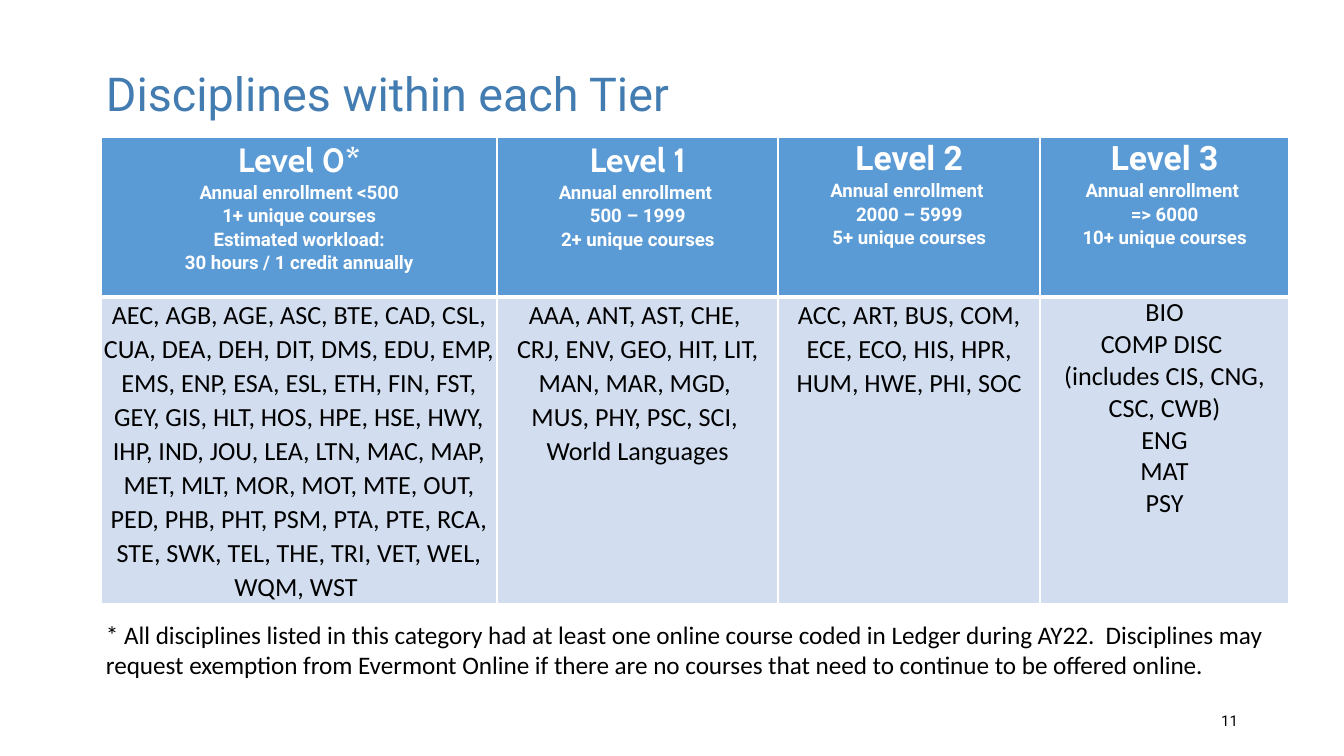
from copy import deepcopy

from lxml.etree import SubElement
from pptx import Presentation
from pptx.dml.color import RGBColor
from pptx.enum.text import MSO_ANCHOR as ANCHOR, PP_ALIGN as ALIGN
from pptx.oxml.ns import qn
from pptx.util import Inches, Pt

W = 10
H = W * 9 / 16
BLUE, PALE, WHITE, BLACK, TITLE = "5B9BD5", "D2DEEF", "FFFFFF", "000000", "427CB1"
COL_WIDTHS = [2.95, 2.09, 1.95, 1.85]
ROW_HEIGHTS = [1.19, 2.28]

# Level name, its font, header lines, disciplines, line spacing of the disciplines
TIERS = [
    ("Level 0*", "Cabin",
     ["Annual enrollment <500\n1+ unique courses", "Estimated workload:",
      "30 hours / 1 credit annually"],
     ["AEC, AGB, AGE, ASC, BTE, CAD, CSL, CUA, DEA, DEH, DIT, DMS, EDU, EMP, "
      "EMS, ENP, ESA, ESL, ETH, FIN, FST, GEY, GIS, HLT, HOS, HPE, HSE, HWY, "
      "IHP, IND, JOU, LEA, LTN, MAC, MAP, MET, MLT, MOR, MOT, MTE, OUT, "
      "PED, PHB, PHT, PSM, PTA, PTE, RCA, STE, SWK, TEL, THE, TRI, VET, WEL, "
      "WQM, WST "], 1.07),
    ("Level 1", "Cabin",
     ["Annual enrollment \n500 – 1999", "2+ unique courses"],
     ["AAA, ANT, AST, CHE, \nCRJ, ENV, GEO, HIT, LIT, MAN, MAR, MGD, \n"
      "MUS, PHY, PSC, SCI, \nWorld Languages"], 1.07),
    ("Level 2", "Roboto",
     ["Annual enrollment \n2000 – 5999", "5+ unique courses"],
     ["ACC, ART, BUS, COM, ECE, ECO, HIS, HPR, HUM, HWE, PHI, SOC"], 1.07),
    ("Level 3", "Roboto",
     ["Annual enrollment \n=> 6000", "10+ unique courses"],
     ["BIO", "COMP DISC \n(includes CIS, CNG, CSC, CWB)", "ENG", "MAT", "PSY"], 1.0),
]
FOOTNOTE = ("* All disciplines listed in this category had at least one online course "
            "coded in Ledger during AY22.  Disciplines may request exemption from "
            "Evermont Online if there are no courses that need to continue to be "
            "offered online.")


def rgb(hex_color):
    return RGBColor.from_string(hex_color)


def write(tf, text, size, font="Roboto", color=BLACK, bold=False,
          align=ALIGN.LEFT, spacing=1.0):
    """Fill the empty first paragraph, or add one after it."""
    p = tf.paragraphs[0]
    if p.runs:
        p = tf.add_paragraph()
    p.text = text
    p.alignment, p.line_spacing = align, spacing
    for r in p.runs:
        f = r.font
        f.size, f.name, f.bold = Pt(size), font, bold
        f.color.rgb = rgb(color)
    for br in p._p.findall(qn("a:br")):
        br.insert(0, deepcopy(p.runs[0]._r.rPr))


def add_text(slide, box, text, size, anchor=ANCHOR.TOP, **fmt):
    tf = slide.shapes.add_textbox(*map(Inches, box)).text_frame
    tf.word_wrap = True
    tf.vertical_anchor = anchor
    write(tf, text, size, **fmt)


def style_cell(cell, fill, bottom):
    cell.margin_left = cell.margin_right = cell.margin_top = cell.margin_bottom = 0
    tc_pr = cell._tc.get_or_add_tcPr()
    for side, width in (("L", 1), ("R", 1), ("T", 1), ("B", bottom)):
        ln = SubElement(tc_pr, qn(f"a:ln{side}"), w=str(Pt(width)))
        SubElement(SubElement(ln, qn("a:solidFill")), qn("a:srgbClr"), val=WHITE)
    cell.fill.solid()
    cell.fill.fore_color.rgb = rgb(fill)


def add_tier_table(slide, left, top):
    box = left, top, sum(COL_WIDTHS), sum(ROW_HEIGHTS)
    table = slide.shapes.add_table(2, len(TIERS), *map(Inches, box)).table
    for row, height in zip(table.rows, ROW_HEIGHTS):
        row.height = Inches(height)
    for i, (name, font, facts, disciplines, spacing) in enumerate(TIERS):
        table.columns[i].width = Inches(COL_WIDTHS[i])
        head, body = table.cell(0, i), table.cell(1, i)
        style_cell(head, BLUE, bottom=3)
        style_cell(body, PALE, bottom=1)
        fmt = dict(color=WHITE, bold=True, align=ALIGN.CENTER, spacing=1.07)
        write(head.text_frame, name, 18, font=font, **fmt)
        for fact in facts:
            write(head.text_frame, fact, 10, **fmt)
        for text in disciplines:
            write(body.text_frame, text, 14, font="Calibri",
                  align=ALIGN.CENTER, spacing=spacing)


def main():
    prs = Presentation()
    prs.slide_width, prs.slide_height = Inches(W), Inches(H)
    slide = prs.slides.add_slide(prs.slide_layouts[6])
    margin = 0.069 * W
    add_text(slide, (margin, 0.3, W - 2 * margin, 0.84), "Disciplines within each Tier",
             25, anchor=ANCHOR.MIDDLE, color=TITLE, spacing=0.9)
    add_tier_table(slide, 0.75, 1.02)
    add_text(slide, (margin, 4.56, 8.84, 0.56), FOOTNOTE, 13.5, font="Calibri")
    add_text(slide, (W - margin - 2.25, 5.21, 2.25, 0.3), "11", 8,
             anchor=ANCHOR.MIDDLE, align=ALIGN.RIGHT)
    prs.save("out.pptx")


if __name__ == "__main__":
    main()
